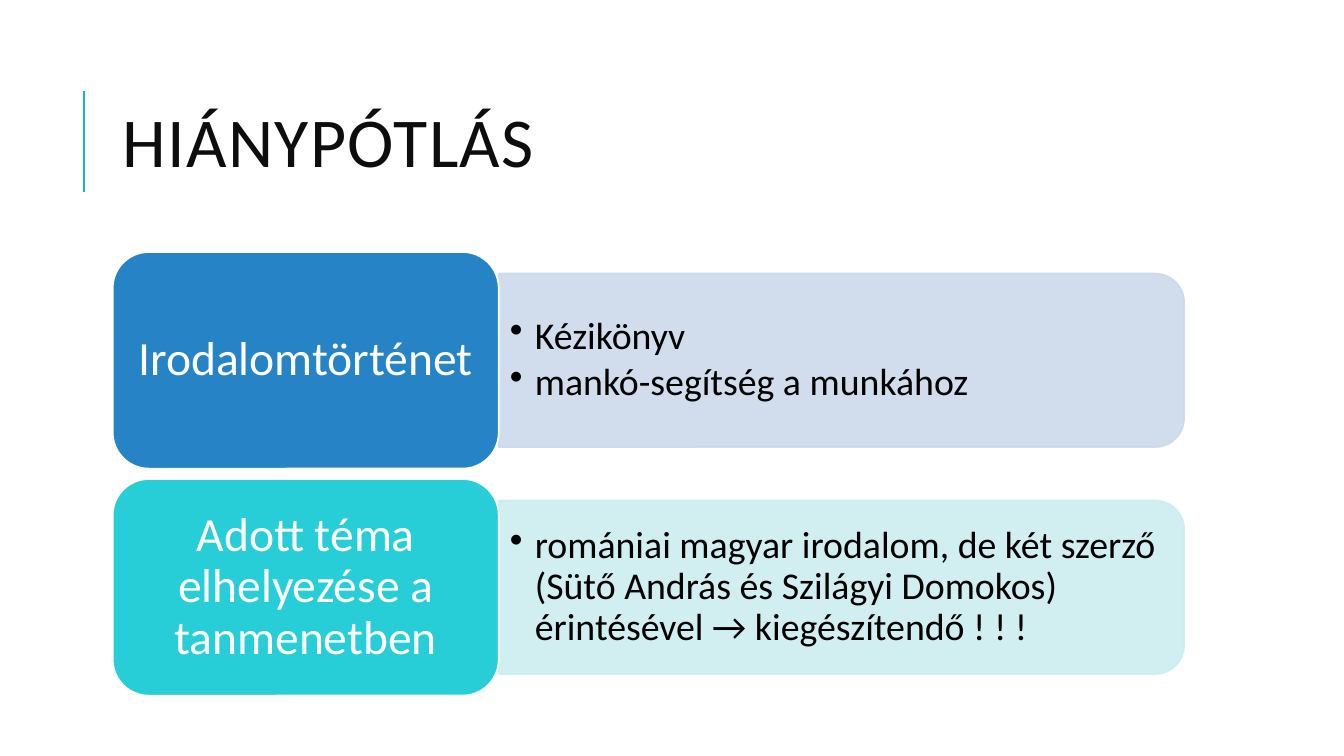
"""Build the HIÁNYPÓTLÁS slide: two labelled rows with bulleted details."""
from dataclasses import dataclass

from lxml.etree import SubElement
from pptx import Presentation
from pptx.dml.color import RGBColor
from pptx.enum.shapes import MSO_CONNECTOR as Connector, MSO_SHAPE as Shape
from pptx.enum.text import MSO_ANCHOR as Anchor, PP_ALIGN as Align
from pptx.oxml.ns import qn
from pptx.util import Cm, Pt

TITLE = "HIÁNYPÓTLÁS"
ROWS = [
    ("Irodalomtörténet", ["Kézikönyv", "mankó-segítség a munkához"], "2683C6", "CDD9EA"),
    ("Adott téma elhelyezése a tanmenetben",
     ["romániai magyar irodalom, de két szerző (Sütő András és Szilágyi Domokos) "
      "érintésével → kiegészítendő ! ! !"],
     "27CED7", "CDEDF0"),
]


@dataclass(frozen=True)
class Theme:
    font: str = "Calibri"
    title_color: str = "0D0D0D"
    accent: str = "1CADE4"
    dark: str = "000000"
    light: str = "FFFFFF"
    title_size: int = 50
    label_size: int = 34
    detail_size: int = 27
    outline: float = 1.25
    detail_opacity: int = 90


THEME = Theme()
LEFT, TOP = 2.84, 6.35
LABEL_WIDTH, LABEL_HEIGHT, ROW_PITCH = 9.73, 5.46, 5.72
DETAIL_WIDTH, DETAIL_HEIGHT = 17.27, 4.37
TEXT_WIDTH, TEXT_HEIGHT = 17.06, 3.94
BULLET_INDENT = 0.63


def color(value):
    return RGBColor.from_string(value)


def set_frame(frame, horizontal, vertical):
    frame.word_wrap = True
    frame.vertical_anchor = Anchor.MIDDLE
    frame.margin_left = frame.margin_right = Cm(horizontal)
    frame.margin_top = frame.margin_bottom = Cm(vertical)


def write(paragraph, text, size, text_color, spacing, align=Align.LEFT):
    paragraph.text = text
    paragraph.alignment = align
    paragraph.line_spacing = spacing
    paragraph.font.name = THEME.font
    paragraph.font.size = Pt(size)
    paragraph.font.color.rgb = color(text_color)


def add_bullet(paragraph):
    properties = paragraph._p.get_or_add_pPr()
    properties.set("marL", str(Cm(BULLET_INDENT)))
    properties.set("indent", str(-Cm(BULLET_INDENT)))
    SubElement(properties, qn("a:buChar"), char="•")


def add_block(slide, kind, box, fill, line):
    shape = slide.shapes.add_shape(kind, *map(Cm, box))
    shape.shadow.inherit = False
    shape.fill.solid()
    shape.fill.fore_color.rgb = color(fill)
    shape.line.color.rgb = color(line)
    shape.line.width = Pt(THEME.outline)
    return shape


def add_title(slide):
    rule = slide.shapes.add_connector(Connector.STRAIGHT, Cm(2.12), Cm(4.83), Cm(2.12), Cm(2.3))
    rule.line.color.rgb = color(THEME.accent)
    rule.line.width = Pt(1.5)
    SubElement(rule._element.spPr, qn("a:effectLst"))

    frame = slide.shapes.add_textbox(Cm(LEFT), Cm(1.63), Cm(27), Cm(4.17)).text_frame
    set_frame(frame, 0.25, 0.13)
    paragraph = frame.paragraphs[0]
    write(paragraph, TITLE, THEME.title_size, THEME.title_color, 0.8)
    paragraph.runs[0]._r.get_or_add_rPr().set("spc", "100")


def add_detail(slide, lines, middle, tint):
    left = LEFT + LABEL_WIDTH
    box = (left + (DETAIL_WIDTH - DETAIL_HEIGHT) / 2, middle - DETAIL_WIDTH / 2,
           DETAIL_HEIGHT, DETAIL_WIDTH)
    panel = add_block(slide, Shape.ROUND_2_SAME_RECTANGLE, box, tint, tint)
    panel.rotation = 90
    for shade in panel._element.spPr.iter(qn("a:srgbClr")):
        SubElement(shade, qn("a:alpha"), val=str(THEME.detail_opacity * 1000))

    text_box = (left, middle - TEXT_HEIGHT / 2, TEXT_WIDTH, TEXT_HEIGHT)
    frame = slide.shapes.add_textbox(*map(Cm, text_box)).text_frame
    set_frame(frame, 0.28, 0.15)
    for index, line in enumerate(lines):
        paragraph = frame.add_paragraph() if index else frame.paragraphs[0]
        add_bullet(paragraph)
        write(paragraph, line, THEME.detail_size, THEME.dark, 0.9)
        paragraph.space_after = Pt(4)


def add_label(slide, text, top, fill):
    box = (LEFT, top, LABEL_WIDTH, LABEL_HEIGHT)
    label = add_block(slide, Shape.ROUNDED_RECTANGLE, box, fill, THEME.light)
    set_frame(label.text_frame, 0.36, 0.18)
    write(label.text_frame.paragraphs[0], text, THEME.label_size, THEME.light, 0.9, Align.CENTER)


def main():
    presentation = Presentation()
    presentation.slide_width, presentation.slide_height = Cm(33.87), Cm(19.05)
    slide = presentation.slides.add_slide(presentation.slide_layouts[6])
    add_title(slide)
    for index, (label, lines, fill, tint) in enumerate(ROWS):
        top = TOP + index * ROW_PITCH
        add_detail(slide, lines, top + LABEL_HEIGHT / 2, tint)
        add_label(slide, label, top, fill)
    presentation.save("out.pptx")


if __name__ == "__main__":
    main()
